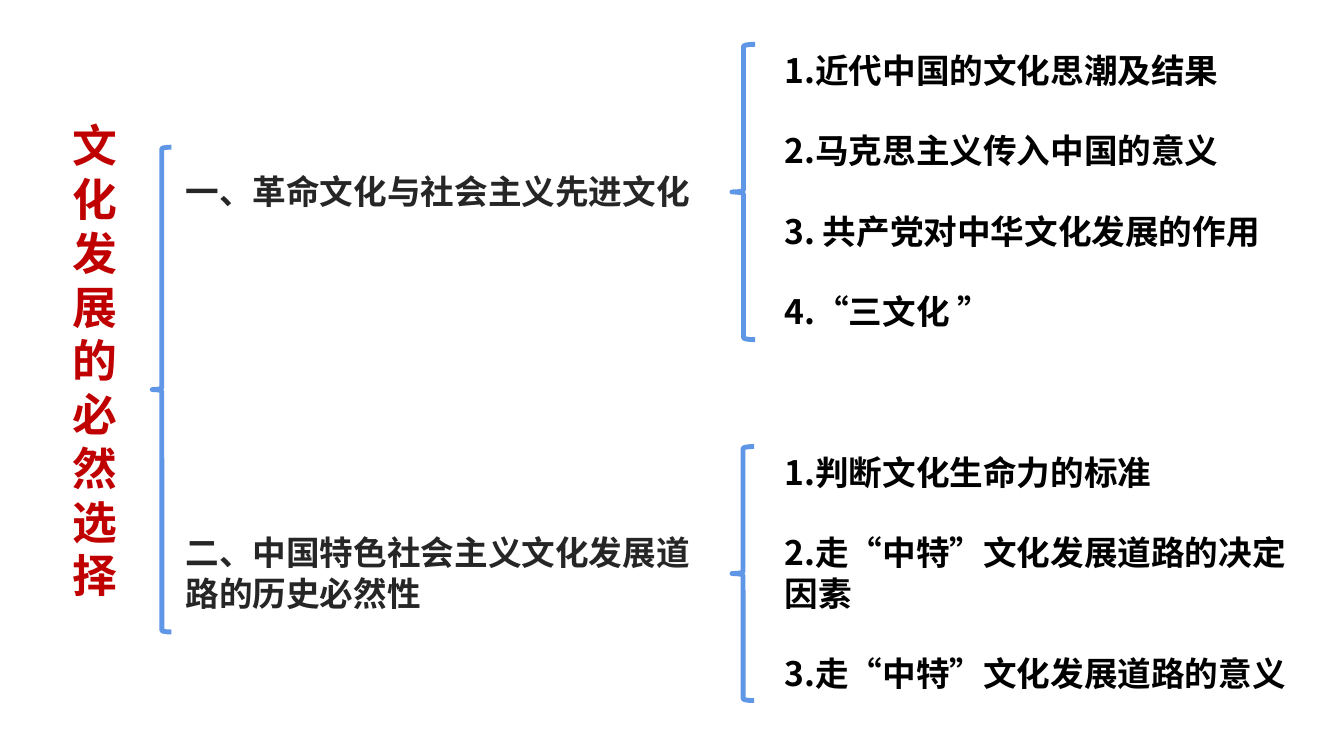
"""Build a brace outline of the chapter on cultural development."""
from dataclasses import dataclass

from lxml.etree import SubElement
from pptx import Presentation
from pptx.dml.color import RGBColor
from pptx.enum.lang import MSO_LANGUAGE_ID as Lang
from pptx.enum.shapes import MSO_SHAPE as Shape
from pptx.enum.text import MSO_ANCHOR as Anchor, MSO_AUTO_SIZE as Fit, PP_ALIGN as Align
from pptx.oxml.ns import qn
from pptx.slide import Slide
from pptx.util import Inches, Pt

FONT = "Noto Sans CJK SC"
HUES = {"title": "C00000", "head": "262626", "item": "000000", "brace": "6096E6"}
LEAD = 1.2


@dataclass
class Block:
    """Text of one placeholder with its place and look."""
    idx: int
    box: tuple[float, float, float, float]
    lines: list[str]
    hue: str
    size: int = 24
    align: Align = Align.LEFT


BLOCKS = [
    Block(0, (0.45, 1.12, 0.98, 4.9), ["文化发展的必然选择"], "title", 32, Align.CENTER),
    Block(1, (1.74, 1.65, 5.22, 0.5), ["一、革命文化与社会主义先进文化"], "head"),
    Block(2, (7.68, 0.44, 5.1, 2.9), [
        "1.近代中国的文化思潮及结果",
        "2.马克思主义传入中国的意义",
        "3. 共产党对中华文化发展的作用",
        "4.“三文化 ”",
    ], "item"),
    Block(3, (1.74, 5.23, 5.22, 0.9), ["二、中国特色社会主义文化发展道路的历史必然性"], "head"),
    Block(4, (7.68, 4.43, 5.32, 2.5), [
        "1.判断文化生命力的标准",
        "2.走“中特”文化发展道路的决定因素",
        "3.走“中特”文化发展道路的意义",
    ], "item"),
]
BRACES = [(1.51, 1.46, 0.19, 4.81), (7.26, 0.44, 0.23, 2.93), (7.26, 4.43, 0.22, 2.52)]


def write(slide: Slide, block: Block) -> None:
    """Place and fill one placeholder."""
    hold = next(p for p in slide.placeholders if p.placeholder_format.idx == block.idx)
    hold.left, hold.top, hold.width, hold.height = map(Inches, block.box)
    frame = hold.text_frame
    frame.word_wrap, frame.auto_size = True, Fit.NONE
    frame.vertical_anchor = Anchor.TOP
    lead = Pt(block.size * LEAD)
    for i, line in enumerate(block.lines):
        para = frame.add_paragraph() if i else frame.paragraphs[0]
        para.alignment = block.align
        para.line_spacing = lead
        para.space_before, para.space_after = lead if i else Pt(0), Pt(0)
        props = para._p.get_or_add_pPr()
        props.set("marL", "0")
        props.set("indent", "0")
        SubElement(props, qn("a:buNone"))
        run = para.add_run()
        run.text = line
        font = run.font
        font.size, font.bold, font.name = Pt(block.size), True, FONT
        font.language_id = Lang.SIMPLIFIED_CHINESE
        font.color.rgb = RGBColor.from_string(HUES[block.hue])
        SubElement(run._r.get_or_add_rPr(), qn("a:ea")).set("typeface", FONT)


def brace(slide: Slide, box: tuple[float, float, float, float]) -> None:
    """Draw one left brace."""
    mark = slide.shapes.add_shape(Shape.LEFT_BRACE, *map(Inches, box))
    mark.shadow.inherit = False
    mark.fill.background()
    mark.line.color.rgb = RGBColor.from_string(HUES["brace"])
    mark.line.width = Pt(3.5)


def main() -> None:
    """Build and save the deck."""
    deck = Presentation()
    deck.slide_width, deck.slide_height = Inches(13.33), Inches(7.5)
    slide = deck.slides.add_slide(deck.slide_layouts.get_by_name("Comparison"))
    for block in BLOCKS:
        write(slide, block)
    for box in BRACES:
        brace(slide, box)
    deck.save("out.pptx")


if __name__ == "__main__":
    main()
